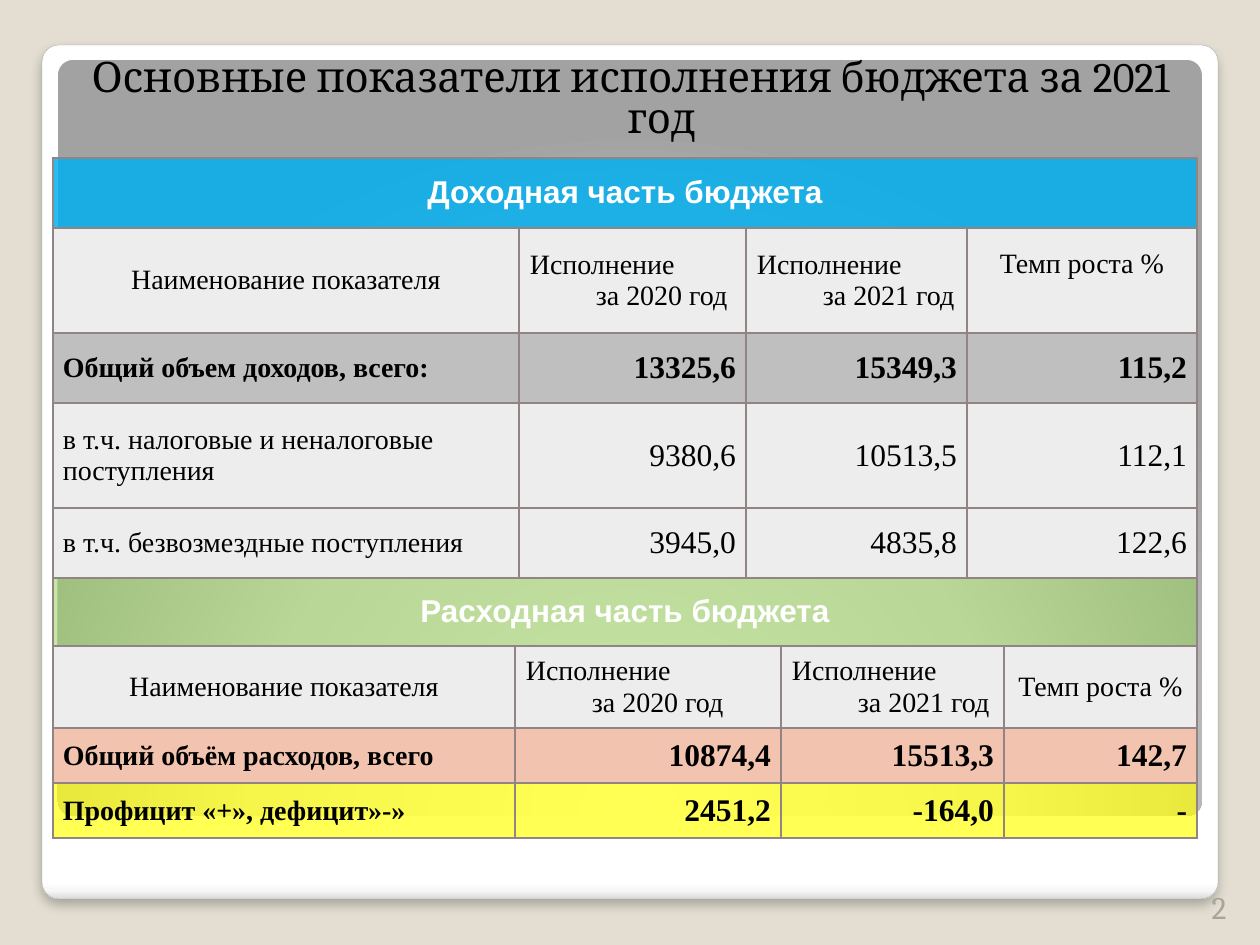
from dataclasses import dataclass

from lxml import etree
from pptx import Presentation
from pptx.dml.color import RGBColor
from pptx.enum import shapes, text
from pptx.oxml import ns
from pptx.util import Emu, Pt

PX = 914400 / 126
INSET = 10
SERIF, SANS, TITLE_FONT = "Times New Roman", "Arial", "Cambria"
BLACK = RGBColor(0x00, 0x00, 0x00)
WHITE = RGBColor(0xFF, 0xFF, 0xFF)
SAND = RGBColor(0xE3, 0xDE, 0xD1)
STONE = RGBColor(0xA8, 0xA4, 0x9B)
EDGE = RGBColor(0xA4, 0xA4, 0xA4)
RULE = RGBColor(0x91, 0x84, 0x85)
BLUE = RGBColor(0x00, 0xB0, 0xF0)
GREEN = RGBColor(0x92, 0xD0, 0x50)
PALE = RGBColor(0xEE, 0xED, 0xED)
GREY = RGBColor(0xBF, 0xBF, 0xBF)
PEACH = RGBColor(0xF2, 0xC4, 0xAF)
YELLOW = RGBColor(0xFF, 0xFF, 0x00)
CARD_STOPS = [(0, WHITE), (98, WHITE), (99, RGBColor(0xF7, 0xF7, 0xF7)), (100, RGBColor(0xDA, 0xDA, 0xDA))]
PANEL_STOPS = [(0, WHITE), (55, RGBColor(0xE1, 0xE1, 0xE1)), (100, RGBColor(0xA2, 0xA2, 0xA2))]
HEADINGS = ["Наименование показателя", "Исполнение\vза 2020 год", "Исполнение\vза 2021 год", "Темп роста %"]


@dataclass
class Row:
    height: int
    values: list[str]
    fill: RGBColor
    bold: bool = False
    opacity: int = 100


@dataclass
class Section:
    title: str
    title_height: int
    fill: RGBColor
    opacity: int
    top: int
    columns: list[int]
    heading_height: int
    rows: list[Row]
    rate_lift: int = 0


SECTIONS = [
    Section("Доходная часть бюджета", 70, BLUE, 84, 158, [466, 227, 221, 230], 105, [
        Row(70, ["Общий объем доходов, всего:", "13325,6", "15349,3", "115,2"], GREY, True),
        Row(105, ["в т.ч. налоговые и неналоговые поступления", "9380,6", "10513,5", "112,1"], PALE),
        Row(70, ["в т.ч. безвозмездные поступления", "3945,0", "4835,8", "122,6"], PALE),
    ], 32),
    Section("Расходная часть бюджета", 68, GREEN, 50, 578, [462, 266, 223, 193], 82, [
        Row(55, ["Общий объём расходов, всего", "10874,4", "15513,3", "142,7"], PEACH, True),
        Row(55, ["Профицит «+», дефицит»-»", "2451,2", "-164,0", "-"], YELLOW, True, 67),
    ]),
]


def px(n: float) -> Emu:
    return Emu(round(n * PX))


def add_xml(parent, tag: str, **attrs):
    return etree.SubElement(parent, ns.qn(tag), {k: str(v) for k, v in attrs.items()})


def add_panel(slide, box: tuple[int, ...], stops: list, radial: bool):
    sp = slide.shapes.add_shape(shapes.MSO_SHAPE.ROUNDED_RECTANGLE, *map(px, box))
    sp.adjustments[0] = 0.02
    sp.fill.background()
    sp.line.fill.background()
    sp.shadow.inherit = False
    props = sp._element.spPr
    grad = etree.Element(ns.qn("a:gradFill"), rotWithShape="1")
    stop_list = add_xml(grad, "a:gsLst")
    for position, color in stops:
        add_xml(add_xml(stop_list, "a:gs", pos=position * 1000), "a:srgbClr", val=color)
    if radial:
        focus = add_xml(grad, "a:path", path="circle")
        add_xml(focus, "a:fillToRect", l=50000, t=175000, r=50000, b=-75000)
    else:
        add_xml(grad, "a:lin", ang=5400000, scaled=0)
    props.replace(props.find(ns.qn("a:noFill")), grad)
    return sp


def add_shadow(sp) -> None:
    effects = sp._element.spPr.find(ns.qn("a:effectLst"))
    shadow = add_xml(effects, "a:outerShdw", blurRad=Pt(6), dist=Pt(4), dir=5400000, rotWithShape=0)
    add_xml(add_xml(shadow, "a:srgbClr", val=BLACK), "a:alpha", val=25000)


def style(p, size: int, font: str, color: RGBColor, align, bold: bool = False) -> None:
    p.alignment = align
    for r in p.runs:
        r.font.size, r.font.name, r.font.bold = Pt(size), font, bold
        r.font.color.rgb = color


def hang(p, margin: int, indent: int) -> None:
    props = p._p.get_or_add_pPr()
    props.set("marL", str(px(margin)))
    props.set("indent", str(px(indent)))


def paint_cell(cell, color: RGBColor, opacity: int) -> None:
    cell.vertical_anchor = text.MSO_ANCHOR.MIDDLE
    cell.margin_left = cell.margin_right = cell.margin_top = cell.margin_bottom = px(INSET)
    cell.fill.solid()
    cell.fill.fore_color.rgb = color
    props = cell._tc.get_or_add_tcPr()
    if opacity < 100:
        add_xml(props.find(".//" + ns.qn("a:srgbClr")), "a:alpha", val=opacity * 1000)
    for i, side in enumerate(("L", "R", "T", "B")):
        border = etree.Element(ns.qn(f"a:ln{side}"), w=str(Pt(1)))
        add_xml(add_xml(border, "a:solidFill"), "a:srgbClr", val=RULE)
        props.insert(i, border)


def add_section(slide, section: Section) -> None:
    rows = [
        Row(section.title_height, [section.title, "", "", ""], section.fill, True, section.opacity),
        Row(section.heading_height, HEADINGS, PALE),
        *section.rows,
    ]
    frame = slide.shapes.add_table(
        len(rows), len(section.columns), px(53), px(section.top),
        px(sum(section.columns)), px(sum(row.height for row in rows)))
    table = frame.table
    table.first_row = table.horz_banding = False
    for column, width in zip(table.columns, section.columns):
        column.width = px(width)
    align = text.PP_ALIGN
    for i, row in enumerate(rows):
        table.rows[i].height = px(row.height)
        for j, value in enumerate(row.values):
            cell = table.cell(i, j)
            paint_cell(cell, row.fill, row.opacity)
            cell.text_frame.text = value
            p = cell.text_frame.paragraphs[0]
            if i == 0:
                style(p, 18, SANS, WHITE, align.CENTER, True)
            elif "\v" in value:
                style(p, 16, SERIF, BLACK, align.LEFT)
                hang(p, 67, -66)
            elif i == 1:
                style(p, 16, SERIF, BLACK, align.CENTER)
            elif j == 0:
                style(p, 16, SERIF, BLACK, align.LEFT, row.bold)
            else:
                style(p, 18, SERIF, BLACK, align.RIGHT, row.bold)
    table.cell(0, 0).merge(table.cell(0, 3))
    table.cell(1, 3).margin_bottom = px(INSET + section.rate_lift)


def set_title(slide) -> None:
    sp = slide.shapes.title
    sp.left, sp.top, sp.width, sp.height = map(px, (53, 57, 1155, 88))
    tf = sp.text_frame
    tf.text = "Основные показатели исполнения бюджета за 2021 год"
    tf.word_wrap = True
    tf.auto_size = text.MSO_AUTO_SIZE.NONE
    tf.vertical_anchor = text.MSO_ANCHOR.MIDDLE
    tf.margin_top = tf.margin_bottom = 0
    p = tf.paragraphs[0]
    style(p, 24, TITLE_FONT, BLACK, text.PP_ALIGN.CENTER)
    p.line_spacing = 0.8
    hang(p, 62, -62)
    slide.shapes._spTree.append(sp._element)


def add_page_number(slide) -> None:
    tf = slide.shapes.add_textbox(*map(px, (1176, 882, 63, 50))).text_frame
    tf.word_wrap = True
    tf.vertical_anchor = text.MSO_ANCHOR.BOTTOM
    tf.text = "2"
    style(tf.paragraphs[0], 18, TITLE_FONT, STONE, text.PP_ALIGN.RIGHT)


def main() -> None:
    prs = Presentation()
    prs.slide_width, prs.slide_height = px(1260), px(945)
    slide = prs.slides.add_slide(prs.slide_layouts[5])
    slide.background.fill.solid()
    slide.background.fill.fore_color.rgb = SAND
    card = add_panel(slide, (42, 45, 1176, 854), CARD_STOPS, False)
    card.line.color.rgb = EDGE
    card.line.width = Pt(0.16)
    add_shadow(card)
    add_panel(slide, (58, 60, 1144, 756), PANEL_STOPS, True)
    add_page_number(slide)
    set_title(slide)
    for section in SECTIONS:
        add_section(slide, section)
    prs.save("out.pptx")


if __name__ == "__main__":
    main()
